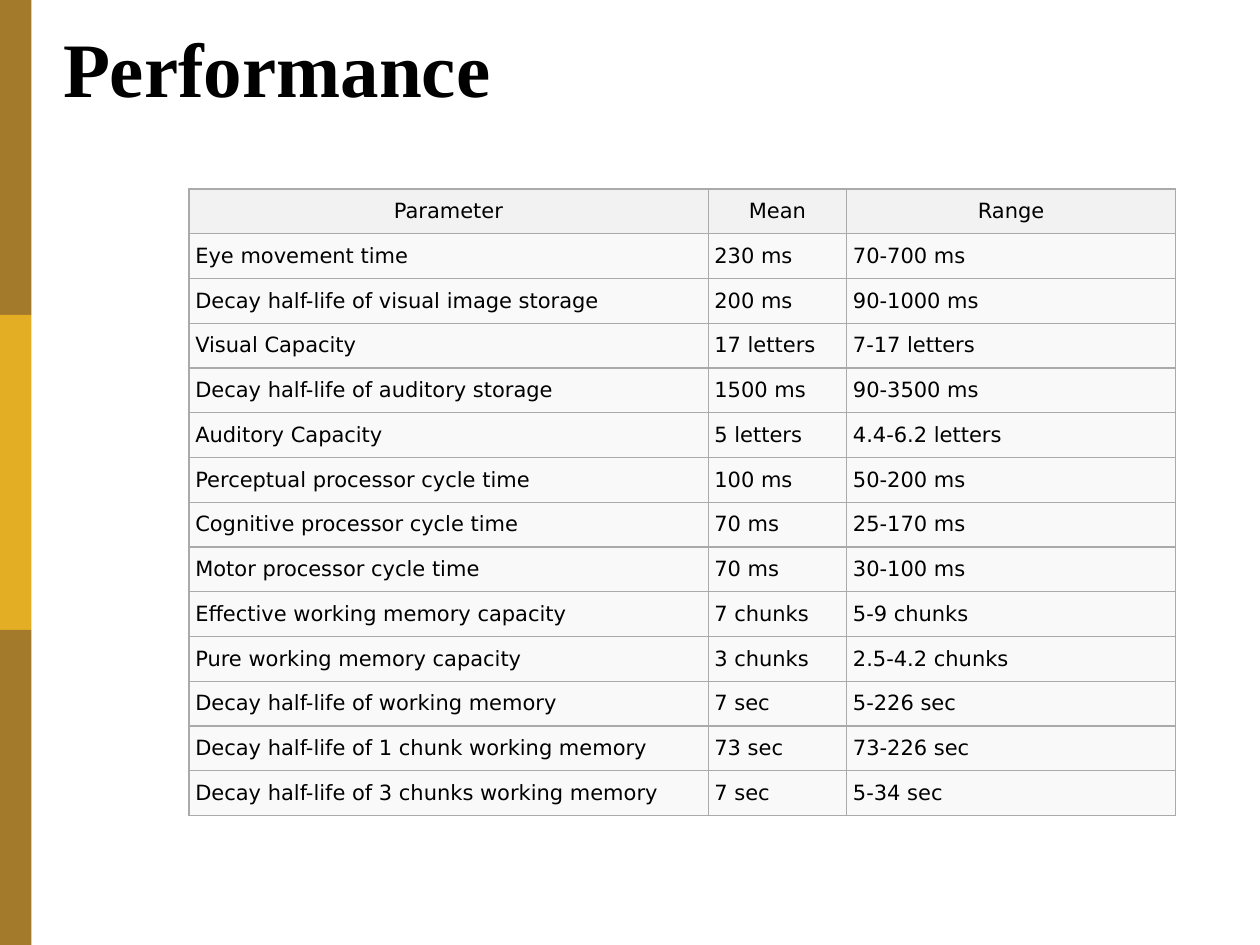
from lxml.etree import SubElement
from pptx import Presentation
from pptx.dml.color import RGBColor
from pptx.enum.shapes import MSO_SHAPE as Shape
from pptx.enum.text import MSO_ANCHOR as Anchor, MSO_AUTO_SIZE as Fit, PP_ALIGN as Align
from pptx.oxml.ns import qn
from pptx.util import Inches, Pt

INK = {"text": "000000", "brown": "A3792C", "gold": "E3AE24",
       "head": "F2F2F2", "body": "F9F9F9", "rule": "AAAAAA"}
COLS, ROWS = 40, 30

DATA = [
    ("Parameter", "Mean", "Range"),
    ("Eye movement time", "230 ms", "70-700 ms"),
    ("Decay half-life of visual image storage", "200 ms", "90-1000 ms"),
    ("Visual Capacity", "17 letters", "7-17 letters"),
    ("Decay half-life of auditory storage", "1500 ms", "90-3500 ms"),
    ("Auditory Capacity", "5 letters", "4.4-6.2 letters"),
    ("Perceptual processor cycle time", "100 ms", "50-200 ms"),
    ("Cognitive processor cycle time", "70 ms", "25-170 ms"),
    ("Motor processor cycle time", "70 ms", "30-100 ms"),
    ("Effective working memory capacity", "7 chunks", "5-9 chunks"),
    ("Pure working memory capacity", "3 chunks", "2.5-4.2 chunks"),
    ("Decay half-life of working memory", "7 sec", "5-226 sec"),
    ("Decay half-life of 1 chunk working memory", "73 sec", "73-226 sec"),
    ("Decay half-life of 3 chunks working memory", "7 sec", "5-34 sec"),
]


class Deck:
    """Style and current slide; lengths are columns and rows of the grid."""

    def __init__(self):
        self.file = Presentation()
        self.file.slide_width, self.file.slide_height = Inches(10), Inches(7.5)
        self.col = self.file.slide_width / COLS
        self.row = self.file.slide_height / ROWS
        self.slide = self.file.slides.add_slide(self.file.slide_layouts[5])

    def box(self, x, y, w, h):
        return (round(x * self.col), round(y * self.row),
                round(w * self.col), round(h * self.row))

    def paint(self, thing, ink):
        thing.fill.solid()
        thing.fill.fore_color.rgb = RGBColor.from_string(INK[ink])

    def text(self, frame, words, size, face, bold=False, align=Align.LEFT):
        line = frame.paragraphs[0]
        line.alignment = align
        run = line.add_run()
        run.text = words
        font = run.font
        font.size, font.name, font.bold = Pt(size), face, bold
        font.color.rgb = RGBColor.from_string(INK["text"])

    def bar(self, ink, *place):
        bar = self.slide.shapes.add_shape(Shape.RECTANGLE, *self.box(*place))
        bar.shadow.inherit = False
        bar.line.fill.background()
        self.paint(bar, ink)

    def title(self, words, *place):
        title = self.slide.shapes.title
        title.left, title.top, title.width, title.height = self.box(*place)
        frame = title.text_frame
        frame.word_wrap, frame.auto_size = True, Fit.NONE
        frame.vertical_anchor = Anchor.TOP
        frame.margin_left = frame.margin_right = frame.margin_bottom = 0
        frame.margin_top = Inches(0.08)
        self.text(frame, words, 44, "Times New Roman", True)

    def edge(self, cell):
        """Rule all four sides; must come before the cell's fill."""
        props = cell._tc.get_or_add_tcPr()
        for side in "LRTB":
            line = SubElement(props, qn(f"a:ln{side}"), w=str(Pt(0.75)))
            fill = SubElement(line, qn("a:solidFill"))
            SubElement(fill, qn("a:srgbClr"), val=INK["rule"])

    def cell(self, cell, words, head):
        self.edge(cell)
        self.paint(cell, "head" if head else "body")
        cell.vertical_anchor = Anchor.MIDDLE
        cell.margin_left = cell.margin_right = Inches(0.05)
        cell.margin_top = cell.margin_bottom = Inches(0.03)
        self.text(cell.text_frame, words, 12, "DejaVu Sans",
                  align=Align.CENTER if head else Align.LEFT)

    def table(self, data, widths, x, y, h):
        place = self.box(x, y, sum(widths), h)
        table = self.slide.shapes.add_table(len(data), len(widths), *place).table
        table.horz_banding = False
        for col, width in zip(table.columns, widths):
            col.width = round(width * self.col)
        for r, texts in enumerate(data):
            table.rows[r].height = round(h * self.row / len(data))
            for c, words in enumerate(texts):
                self.cell(table.cell(r, c), words, r == 0)


def main():
    deck = Deck()
    third = ROWS / 3
    for i, ink in enumerate(("brown", "gold", "brown")):
        deck.bar(ink, 0, i * third, 1, third)
    deck.title("Performance", 2, 0.32, 36, 2.68)
    deck.table(DATA, (16.48, 4.4, 10.44), 6, 6, 19.9)
    deck.file.save("out.pptx")


if __name__ == "__main__":
    main()
